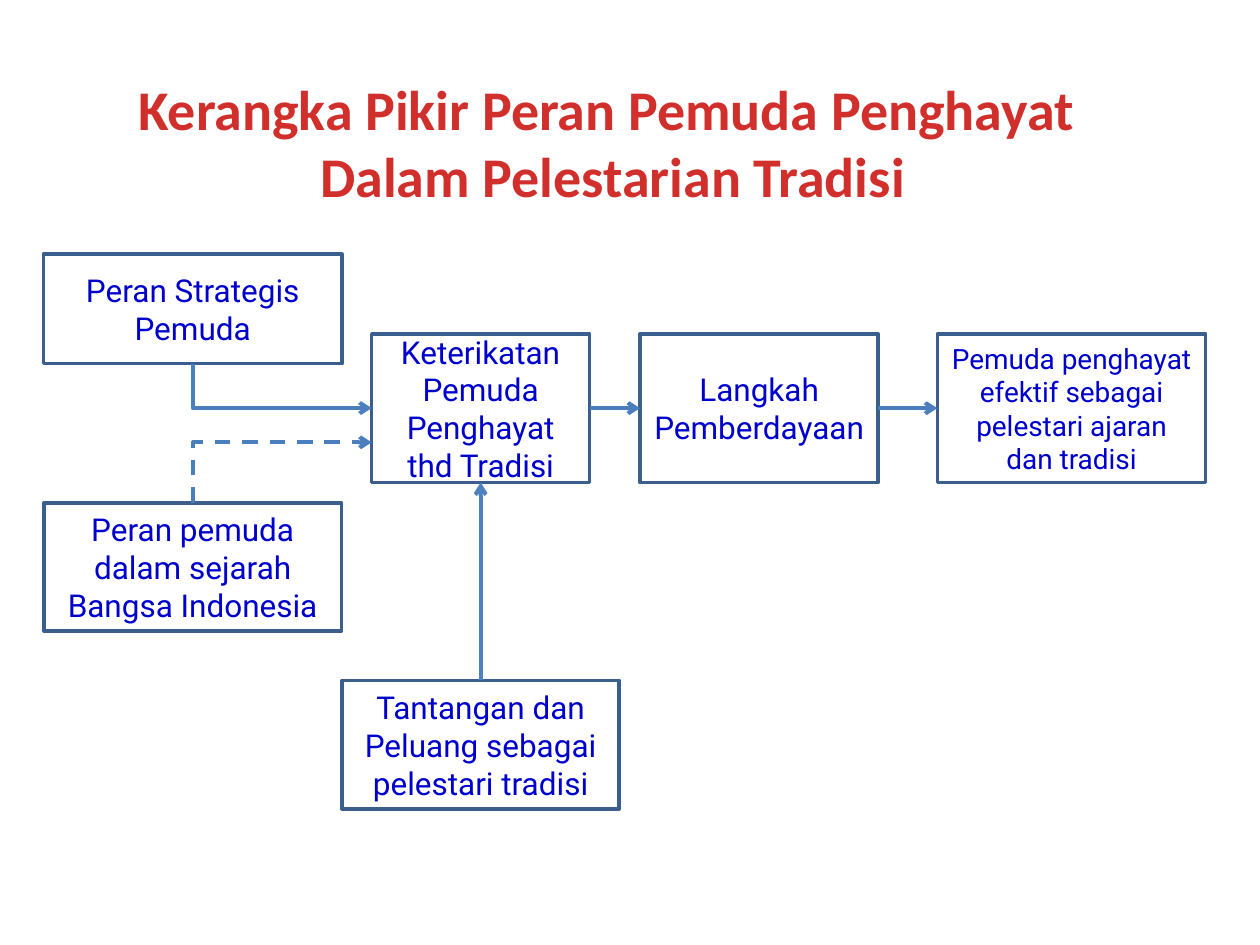
"""Build a flow diagram slide on the role of young people in preserving tradition."""
from dataclasses import dataclass

from lxml import etree
from pptx import Presentation
from pptx import util as u
from pptx.dml.color import RGBColor
from pptx.enum import dml, shapes, text
from pptx.oxml.ns import qn


@dataclass(frozen=True)
class Theme:
    """Colours, fonts and sizes of the slide."""
    title: str = "D02F2C"
    label: str = "0000CC"
    border: str = "3A5F8C"
    arrow: str = "4B7EBC"
    rise: str = "4F81BD"
    title_font: str = "Calibri"
    label_font: str = "Roboto"
    title_size: int = 32
    label_size: int = 18
    small_size: int = 16
    border_width: float = 2
    arrow_width: float = 2.25


T = Theme()
WIDTH, HEIGHT = u.Inches(10), u.Inches(7.5)
ROW_TOP, ROW_HEIGHT = 35.33, 15.73
BOXES = {
    "history": ("Peran pemuda dalam sejarah Bangsa Indonesia", 3.5, 53.2, 23.6, 13.6, T.label_size),
    "strategy": ("Peran Strategis Pemuda", 3.45, 26.9, 23.7, 11.6, T.label_size),
    "bond": ("Keterikatan Pemuda Penghayat thd Tradisi", 29.5, ROW_TOP, 17.3, ROW_HEIGHT, T.label_size),
    "challenge": ("Tantangan dan Peluang sebagai pelestari tradisi", 27.15, 72, 22, 13.6, T.label_size),
    "steps": ("Langkah Pemberdayaan", 50.8, ROW_TOP, 18.9, ROW_HEIGHT, T.label_size),
    "outcome": ("Pemuda penghayat efektif sebagai pelestari ajaran dan tradisi",
                74.4, ROW_TOP, 21.3, ROW_HEIGHT, T.small_size),
}


def place(left, top, width, height):
    """Turn percentages of the slide into lengths."""
    return [int(v * side / 100) for v, side in
            zip((left, top, width, height), (WIDTH, HEIGHT) * 2)]


def set_font(p, color, **values):
    """Give every run of a paragraph its format."""
    for r in p.runs:
        for name, value in values.items():
            setattr(r.font, name, value)
        r.font.color.rgb = RGBColor.from_string(color)


def add_box(s, label, left, top, width, height, size):
    """Add an outlined rectangle with a centred label."""
    sp = s.shapes.add_shape(shapes.MSO_SHAPE.RECTANGLE, *place(left, top, width, height))
    sp.shadow.inherit = False
    sp.fill.background()
    sp.line.color.rgb = RGBColor.from_string(T.border)
    sp.line.width = u.Pt(T.border_width)
    tf = sp.text_frame
    tf.word_wrap = True
    tf.vertical_anchor = text.MSO_ANCHOR.MIDDLE
    p = tf.paragraphs[0]
    p.text, p.alignment = label, text.PP_ALIGN.CENTER
    set_font(p, T.label, name=T.label_font, size=u.Pt(size))
    return sp


def style_arrow(cx, color=T.arrow, dashed=False):
    """Set a connector's line and put an open arrowhead at its end."""
    cx.line.color.rgb = RGBColor.from_string(color)
    cx.line.width = u.Pt(T.arrow_width)
    if dashed:
        cx.line.dash_style = dml.MSO_LINE.DASH
    etree.SubElement(cx.line._get_or_add_ln(), qn("a:tailEnd"), type="arrow")
    etree.SubElement(cx._element.spPr, qn("a:effectLst"))


def add_arrow(s, start, start_site, end, end_site, color=T.arrow):
    """Join two boxes with a straight arrow."""
    cx = s.shapes.add_connector(shapes.MSO_CONNECTOR.STRAIGHT, 0, 0, 0, 0)
    cx.begin_connect(start, start_site)
    cx.end_connect(end, end_site)
    style_arrow(cx, color)


def add_elbow(s, start, end, share, down, dashed=False):
    """Lead an arrow out of a box vertically and into another's left side."""
    x0, x1 = start.left + start.width // 2, end.left
    y0 = start.top + (start.height if down else 0)
    y1 = int(end.top + share * end.height)
    width, height = abs(y1 - y0), x1 - x0
    left, top = (x0 + x1 - width) // 2, (y0 + y1 - height) // 2
    cx = s.shapes.add_connector(shapes.MSO_CONNECTOR.ELBOW, left, top, left + width, top + height)
    spPr = cx._element.spPr
    spPr.find(qn("a:prstGeom")).set("prst", "bentConnector2")
    turn = {"rot": "16200000", "flipH": "1"} if down else {"rot": "5400000", "flipH": "1", "flipV": "1"}
    for name, value in turn.items():
        spPr.find(qn("a:xfrm")).set(name, value)
    style_arrow(cx, dashed=dashed)


def add_title(s, lines):
    """Add the centred title, one paragraph a line."""
    tf = s.shapes.add_textbox(*place(9.7, 7.2, 77.9, 15.7)).text_frame
    tf.word_wrap = False
    tf.auto_size = text.MSO_AUTO_SIZE.SHAPE_TO_FIT_TEXT
    tf.text = "\n".join(lines)
    for p in tf.paragraphs:
        p.alignment = text.PP_ALIGN.CENTER
        set_font(p, T.title, name=T.title_font, size=u.Pt(T.title_size), bold=True)


def main():
    """Build and save the slide."""
    prs = Presentation()
    prs.slide_width, prs.slide_height = WIDTH, HEIGHT
    s = prs.slides.add_slide(prs.slide_layouts[6])
    box = {name: add_box(s, *values) for name, values in BOXES.items()}
    add_elbow(s, box["strategy"], box["bond"], 0.5, down=True)
    add_elbow(s, box["history"], box["bond"], 0.73, down=False, dashed=True)
    add_arrow(s, box["challenge"], 0, box["bond"], 2, T.rise)
    add_arrow(s, box["bond"], 3, box["steps"], 1)
    add_arrow(s, box["steps"], 3, box["outcome"], 1)
    add_title(s, ["Kerangka Pikir Peran Pemuda Penghayat ", "Dalam Pelestarian Tradisi"])
    prs.save("out.pptx")


if __name__ == "__main__":
    main()
